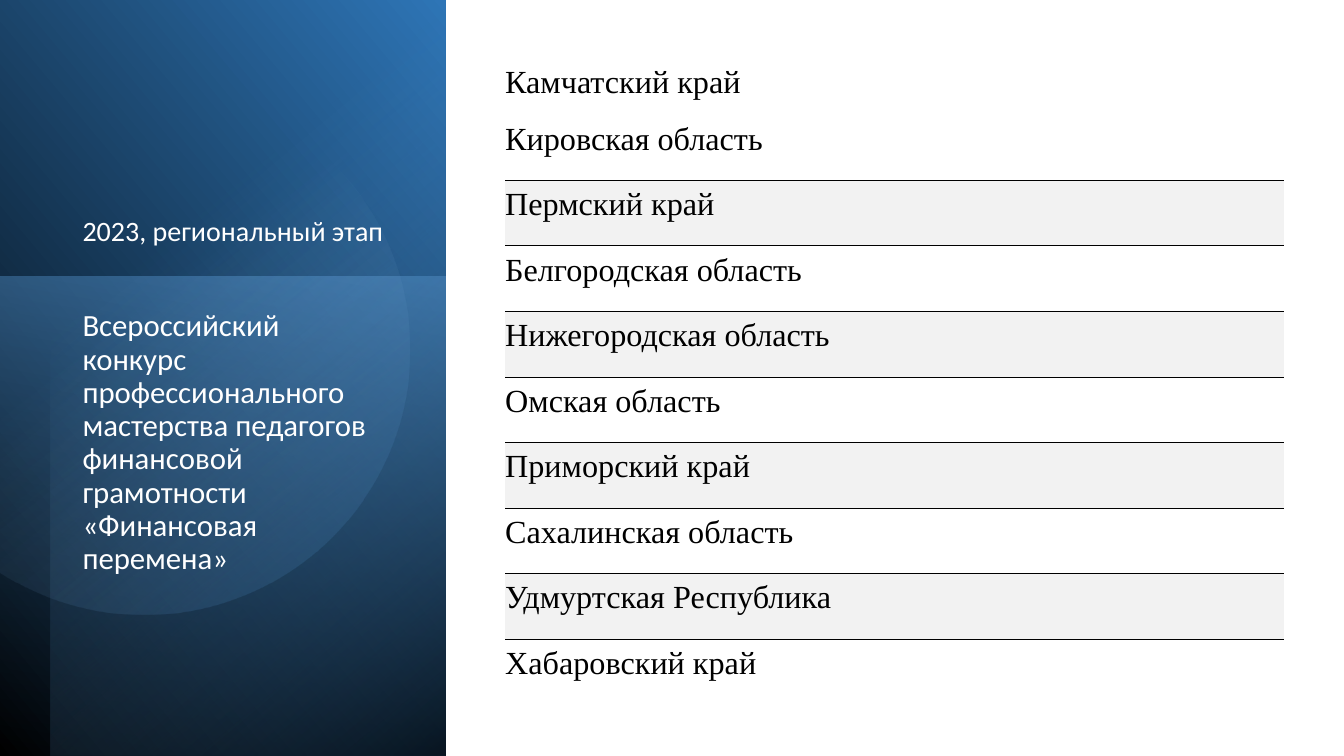
from dataclasses import dataclass
from math import acos, cos, sin

from lxml.etree import SubElement as Sub
from pptx import Presentation
from pptx.dml.color import RGBColor as Color
from pptx.enum.shapes import MSO_SHAPE as Form
from pptx.enum.text import MSO_ANCHOR as Anchor
from pptx.oxml.ns import qn
from pptx.shapes.autoshape import Shape
from pptx.slide import Slide
from pptx.table import _Cell as Cell
from pptx.text.text import _Paragraph as Para
from pptx.util import Inches, Pt


@dataclass(frozen=True)
class Theme:
    sans: str = "Calibri"
    serif: str = "Times New Roman"
    white: str = "FFFFFF"
    black: str = "000000"
    band: str = "F2F2F2"
    navy: str = "1F4E79"
    deep: str = "2E75B6"
    blue: str = "5B9BD5"
    pale: str = "9DC3E6"
    title: float = 22
    stage: float = 20
    row: float = 23
    rule: float = 0.75
    plain: str = "{2D5ABB26-0587-4C30-8999-92F81FD0307C}"


@dataclass(frozen=True)
class Stop:
    place: int
    color: str
    alpha: int = 100


@dataclass(frozen=True)
class Panel:
    box: tuple[float, float, float, float]
    turn: int
    flip: bool
    angle: int
    stops: tuple[Stop, ...]


@dataclass(frozen=True)
class Label:
    box: tuple[float, float, float, float]
    lines: tuple[str, ...]
    size: float
    anchor: Anchor


THEME = Theme()
PANELS = (
    Panel((-1.55, 1.55, 7.52, 4.42), 90, True, 310,
          (Stop(0, THEME.black), Stop(100, THEME.deep))),
    Panel((-0.17, 2.91, 4.76, 4.42), 270, False, 190,
          (Stop(0, THEME.blue, 50), Stop(100, THEME.navy, 0))),
    Panel((-1.29, 1.79, 7.5, 3.92), 270, True, 220,
          (Stop(0, THEME.black, 59), Stop(69, THEME.blue, 0))),
)
GLOW = (Stop(39, THEME.pale, 0), Stop(100, THEME.deep, 26))
LABELS = (
    Label((0.72, 3.03, 3.15, 3.36),
          ("Всероссийский конкурс профессионального мастерства педагогов "
           "финансовой грамотности", "«Финансовая перемена»"),
          THEME.title, Anchor.TOP),
    Label((0.72, 0.88, 3.19, 1.63), ("2023, региональный этап",),
          THEME.stage, Anchor.BOTTOM),
)
REGIONS = (
    "Камчатский край", "Кировская область", "Пермский край",
    "Белгородская область", "Нижегородская область", "Омская область",
    "Приморский край", "Сахалинская область", "Удмуртская Республика",
    "Хабаровский край",
)


def shade(shape: Shape, stops: tuple[Stop, ...], angle: int) -> None:
    """Fill a shape with a linear gradient and drop its line and shadow."""
    shape.shadow.inherit = False
    shape.line.fill.background()
    shape.fill.background()
    props = shape._element.spPr
    grad = Sub(props, qn("a:gradFill"))
    props.replace(props.find(qn("a:noFill")), grad)
    group = Sub(grad, qn("a:gsLst"))
    for stop in stops:
        mark = Sub(group, qn("a:gs"), pos=str(stop.place * 1000))
        tint = Sub(mark, qn("a:srgbClr"), val=stop.color)
        if stop.alpha < 100:
            Sub(tint, qn("a:alpha"), val=str(stop.alpha * 1000))
    Sub(grad, qn("a:lin"), ang=str(angle * 60000), scaled="0")


def draw_panel(slide: Slide, panel: Panel) -> None:
    """Draw one turned gradient rectangle."""
    shape = slide.shapes.add_shape(Form.RECTANGLE, *map(Inches, panel.box))
    shape.rotation = panel.turn
    if panel.flip:
        shape._element.spPr.xfrm.set("flipH", "1")
    shade(shape, panel.stops, panel.angle)


def draw_disc(slide: Slide, mid: tuple[float, float], radius: float) -> None:
    """Draw a disc cut off by the left edge of the slide."""
    steps = 120
    reach = acos(-mid[0] / radius)
    turns = [reach * (2 * i / steps - 1) for i in range(steps + 1)]
    points = [(Inches(mid[0] + radius * cos(t)), Inches(mid[1] + radius * sin(t)))
              for t in turns]
    path = slide.shapes.build_freeform(*points[0])
    path.add_line_segments(points[1:], close=True)
    shade(path.convert_to_shape(), GLOW, 52)


def style(para: Para, face: str, size: float, color: str) -> None:
    """Set the font of a paragraph."""
    para.font.name = face
    para.font.size = Pt(size)
    para.font.color.rgb = Color.from_string(color)


def draw_label(slide: Slide, label: Label) -> None:
    """Draw one white text box with line breaks between its lines."""
    frame = slide.shapes.add_textbox(*map(Inches, label.box)).text_frame
    frame.word_wrap = True
    frame.vertical_anchor = label.anchor
    para = frame.paragraphs[0]
    para.text = "\v".join(label.lines)
    para.line_spacing = 0.9
    style(para, THEME.sans, label.size, THEME.white)


def rule(cell: Cell, side: str) -> None:
    """Draw a thin black border on one side of a cell."""
    props = cell._tc.get_or_add_tcPr()
    line = Sub(props, qn(f"a:{side}"), w=str(Pt(THEME.rule)))
    Sub(Sub(line, qn("a:solidFill")), qn("a:srgbClr"), val=THEME.black)
    props.insert(0, line)


def draw_table(slide: Slide) -> None:
    """List the regions, banding every second row after the first."""
    count = len(REGIONS)
    box = map(Inches, (5.01, 0.51, 7.73, 6.48))
    table = slide.shapes.add_table(count, 1, *box).table
    table.first_row = table.horz_banding = False
    table._tbl.tblPr.find(qn("a:tableStyleId")).text = THEME.plain
    for i, name in enumerate(REGIONS):
        table.rows[i].height = Inches(0.65 if i else 0.63)
        cell = table.cell(i, 0)
        cell.margin_left, cell.margin_right = 0, Inches(0.29)
        cell.margin_top, cell.margin_bottom = Inches(0.04), Inches(0.14)
        cell.vertical_anchor = Anchor.TOP if i else Anchor.BOTTOM
        para = cell.text_frame.paragraphs[0]
        para.text = name
        para.line_spacing = 1.07
        para.space_after = Pt(8)
        style(para, THEME.serif, THEME.row, THEME.black)
        if i and i % 2 == 0:
            cell.fill.solid()
            cell.fill.fore_color.rgb = Color.from_string(THEME.band)
            rule(cell, "lnT")
        else:
            cell.fill.background()
            if 0 < i < count - 1:
                rule(cell, "lnB")


def main() -> None:
    """Build the slide and save it."""
    deck = Presentation()
    deck.slide_width, deck.slide_height = Inches(13.33), Inches(7.5)
    slide = deck.slides.add_slide(deck.slide_layouts[6])
    for panel in PANELS:
        draw_panel(slide, panel)
    draw_disc(slide, (1.43, 3.47), 2.63)
    for label in LABELS:
        draw_label(slide, label)
    draw_table(slide)
    deck.save("out.pptx")


if __name__ == "__main__":
    main()
